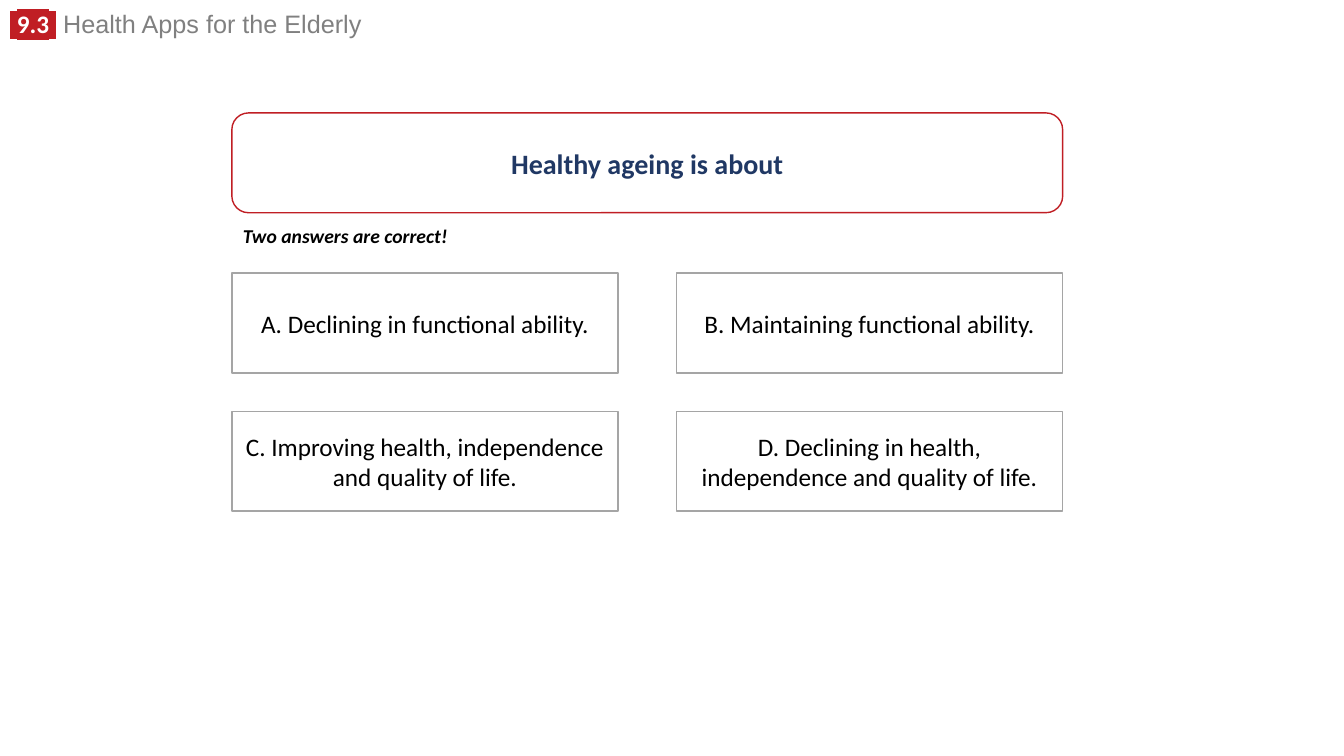
import pptx
import pptx.dml.color
import pptx.enum.shapes
import pptx.enum.text
import pptx.oxml.ns
import pptx.util
from lxml import etree

Inches = pptx.util.Inches
SHAPE = pptx.enum.shapes.MSO_SHAPE
ALIGN = pptx.enum.text.PP_ALIGN
ANCHOR = pptx.enum.text.MSO_ANCHOR
FIT = pptx.enum.text.MSO_AUTO_SIZE

SECTION = "9.3"
TOPIC = "Health Apps for the Elderly"
QUESTION = "Healthy ageing is about"
HINT = "Two answers are correct!"
ANSWERS = [
    "A. Declining in functional ability.",
    "B. Maintaining functional ability.",
    "C. Improving health, independence and quality of life.",
    "D. Declining in health, independence and quality of life.",
]

THEME = {
    "body": "Calibri", "heading": "Arial",
    "red": "C01E24", "navy": "203864", "grey": "808080",
    "border": "A5A5A5", "white": "FFFFFF", "black": "000000",
    "question_size": 20, "text_size": 18, "hint_size": 14,
}

LEFT, BOX_HEIGHT = 2.3, 0.99
QUESTION_TOP, QUESTION_WIDTH = 1.12, 8.24
ANSWER_TOP, ANSWER_WIDTH = 2.71, 3.83
COLUMN_STEP, ROW_STEP, COLUMNS = 4.41, 1.37, 2


def rgb(name):
    return pptx.dml.color.RGBColor.from_string(THEME[name])


def add_run(paragraph, text, size, color, font="body", bold=False, italic=False, highlight=None):
    run = paragraph.add_run()
    run.text = text
    run.font.name = THEME[font]
    run.font.size = pptx.util.Pt(THEME[size])
    run.font.bold = bold
    run.font.italic = italic
    run.font.color.rgb = rgb(color)
    if highlight:
        qn = pptx.oxml.ns.qn
        marker = etree.Element(qn("a:highlight"))
        etree.SubElement(marker, qn("a:srgbClr"), val=THEME[highlight])
        run.font.fill  # the highlight must directly follow the text fill
        run._r.rPr.find(qn("a:solidFill")).addnext(marker)


def add_text_box(slide, left, top, width, height, wrap):
    frame = slide.shapes.add_textbox(*map(Inches, (left, top, width, height))).text_frame
    frame.word_wrap = wrap
    frame.auto_size = FIT.SHAPE_TO_FIT_TEXT
    return frame.paragraphs[0]


def add_box(slide, kind, left, top, width, border, text, **style):
    box = slide.shapes.add_shape(kind, *map(Inches, (left, top, width, BOX_HEIGHT)))
    box.shadow.inherit = False
    box.fill.solid()
    box.fill.fore_color.rgb = rgb("white")
    box.line.color.rgb = rgb(border)
    box.line.width = pptx.util.Pt(1)
    box.text_frame.word_wrap = True
    box.text_frame.vertical_anchor = ANCHOR.MIDDLE
    paragraph = box.text_frame.paragraphs[0]
    paragraph.alignment = ALIGN.CENTER
    add_run(paragraph, text, **style)


def main():
    deck = pptx.Presentation()
    deck.slide_width, deck.slide_height = Inches(13.33), Inches(7.5)
    slide = deck.slides.add_slide(deck.slide_layouts[6])

    header = add_text_box(slide, 0, 0.09, 9.52, 0.35, wrap=True)
    header.line_spacing = 0.8
    for text, font in ((" ", "heading"), (SECTION, "body"), (" ", "heading")):
        add_run(header, text, "text_size", "white", font, bold=True, highlight="red")
    add_run(header, " " + TOPIC, "text_size", "grey", "heading")

    add_box(slide, SHAPE.ROUNDED_RECTANGLE, LEFT, QUESTION_TOP, QUESTION_WIDTH, "red",
            QUESTION, size="question_size", color="navy", bold=True)

    hint = add_text_box(slide, 2.31, 2.17, 2.24, 0.34, wrap=False)
    add_run(hint, HINT, "hint_size", "black", bold=True, italic=True)

    for index, answer in enumerate(ANSWERS):
        row, column = divmod(index, COLUMNS)
        add_box(slide, SHAPE.RECTANGLE, LEFT + column * COLUMN_STEP,
                ANSWER_TOP + row * ROW_STEP, ANSWER_WIDTH, "border",
                answer, size="text_size", color="black")

    deck.save("out.pptx")


if __name__ == "__main__":
    main()
